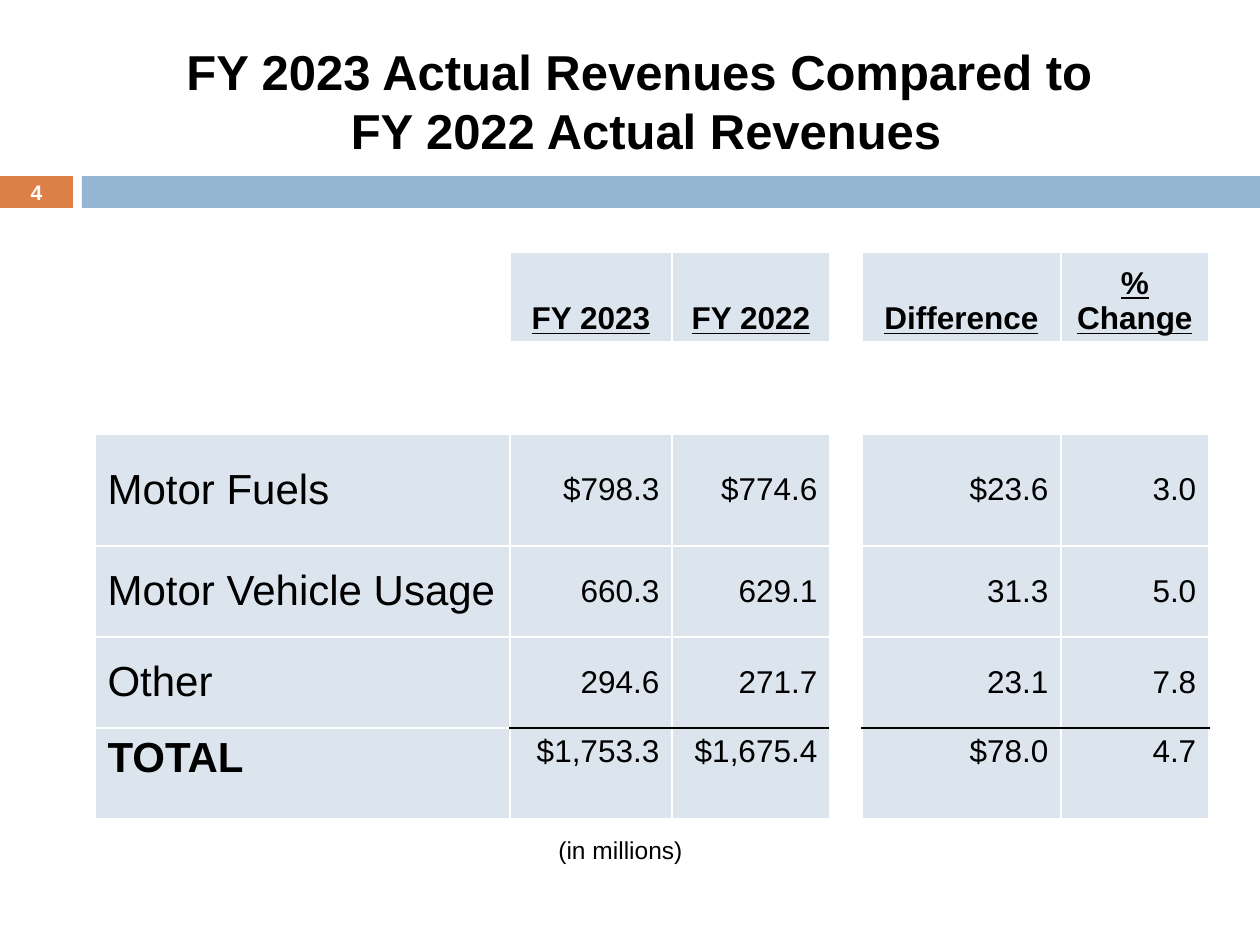
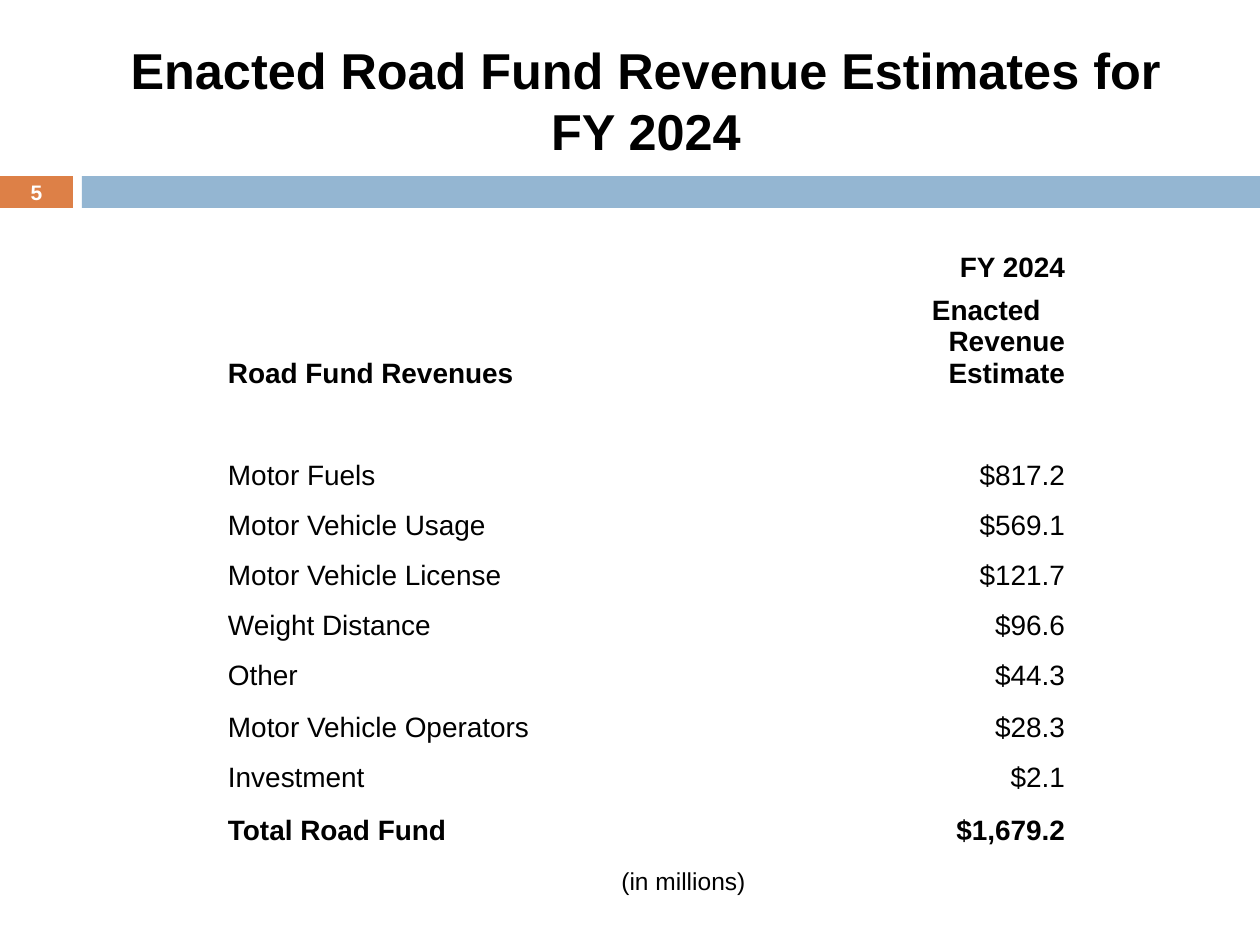
"""Build two road fund revenue slides, each with a title band and a table."""
from dataclasses import dataclass
from typing import Optional

from lxml import etree
from pptx import Presentation
from pptx.dml.color import RGBColor as RGB
from pptx.enum.shapes import MSO_SHAPE as SHAPE
from pptx.enum.text import MSO_ANCHOR as ANCHOR, MSO_AUTO_SIZE as FIT, PP_ALIGN as ALIGN
from pptx.oxml.ns import qn
from pptx.util import Emu, Pt

PX = 914400 / 126
FONT = "Arial"
COLORS = {"orange": "DD8047", "blue": "94B6D2", "cell": "DCE5EE",
          "white": "FFFFFF", "black": "000000"}
SIDES = {"l": "lnL", "r": "lnR", "t": "lnT", "b": "lnB"}


@dataclass(frozen=True)
class Box:
    x: int
    y: int
    w: int
    h: int

    def emu(self) -> list[Emu]:
        return [px(v) for v in (self.x, self.y, self.w, self.h)]


@dataclass(frozen=True)
class TextStyle:
    size: float
    bold: bool = False
    underline: bool = False
    align: ALIGN = ALIGN.LEFT
    anchor: ANCHOR = ANCHOR.TOP
    color: str = "black"


@dataclass(frozen=True)
class Grid:
    box: Box
    cols: list[int]
    rows: list[int]


@dataclass(frozen=True)
class Page:
    number: int
    title: str
    title_size: float
    note: Box
    note_wraps: bool


TITLE = Box(84, 32, 1124, 136)
TAB = Box(0, 176, 73, 32)
BAND = Box(82, 176, 1178, 32)
NUMBER = Box(0, 175, 73, 34)

COMPARISON = Grid(Box(95, 252, 1114, 567), [415, 162, 158, 32, 199, 148],
                  [91, 91, 112, 91, 91, 91])
COMPARISON_ROWS = [
    ["", "FY 2023", "FY 2022", "", "Difference", "% Change"],
    [""] * 6,
    ["Motor Fuels", "$798.3", "$774.6", "", "$23.6", "3.0"],
    ["Motor Vehicle Usage", "660.3", "629.1", "", "31.3", "5.0"],
    ["Other", "294.6", "271.7", "", "23.1", "7.8"],
    ["TOTAL", "$1,753.3", "$1,675.4", "", "$78.0", "4.7"],
]
ESTIMATES = Grid(Box(227, 230, 839, 617), [499, 188, 152],
                 [53, 106, 53, 50, 50, 50, 50, 50, 52, 50, 53])
ESTIMATE_ROWS = [
    ("", "FY 2024"),
    ("Road Fund Revenues", "Enacted\nRevenue Estimate"),
    ("", ""),
    ("Motor Fuels", "$817.2"),
    ("Motor Vehicle Usage", "$569.1"),
    ("Motor Vehicle License", "$121.7"),
    ("Weight Distance", "$96.6"),
    ("Other", "$44.3"),
    ("Motor Vehicle Operators", "$28.3"),
    ("Investment", "$2.1"),
    ("Total Road Fund", "$1,679.2"),
]


def px(n: float) -> Emu:
    return Emu(round(n * PX))


def rgb(name: str) -> RGB:
    return RGB.from_string(COLORS[name])


def write(tf, text: str, style: TextStyle) -> None:
    tf.text = text
    for p in tf.paragraphs:
        p.alignment = style.align
        f = p.font
        f.name, f.size, f.bold, f.underline = FONT, Pt(style.size), style.bold, style.underline
        f.color.rgb = rgb(style.color)


def add_bar(slide, box: Box, color: str) -> None:
    sp = slide.shapes.add_shape(SHAPE.RECTANGLE, *box.emu())
    sp.shadow.inherit = False
    sp.fill.solid()
    sp.fill.fore_color.rgb = rgb(color)
    sp.line.fill.background()


def add_text(slide, box: Box, text: str, style: TextStyle, wrap: bool = True) -> None:
    tf = slide.shapes.add_textbox(*box.emu()).text_frame
    tf.word_wrap = wrap
    tf.vertical_anchor = style.anchor
    write(tf, text, style)


def add_page(prs, page: Page):
    slide = prs.slides.add_slide(prs.slide_layouts[5])
    add_bar(slide, TAB, "orange")
    add_bar(slide, BAND, "blue")
    title = slide.shapes.title
    title.left, title.top, title.width, title.height = TITLE.emu()
    tf = title.text_frame
    tf.auto_size, tf.vertical_anchor = FIT.NONE, ANCHOR.MIDDLE
    write(tf, page.title, TextStyle(page.title_size, True, align=ALIGN.CENTER))
    add_text(slide, NUMBER, str(page.number),
             TextStyle(12, True, align=ALIGN.CENTER, anchor=ANCHOR.MIDDLE, color="white"))
    add_text(slide, page.note, "(in millions)", TextStyle(14), page.note_wraps)
    return slide


def add_grid(slide, grid: Grid):
    table = slide.shapes.add_table(len(grid.rows), len(grid.cols), *grid.box.emu()).table
    table.first_row = table.horz_banding = False
    for col, w in zip(table.columns, grid.cols):
        col.width = px(w)
    for row, h in zip(table.rows, grid.rows):
        row.height = px(h)
    return table


def fill_cell(cell, text: str, style: TextStyle, fill: Optional[str] = None) -> None:
    cell.vertical_anchor = style.anchor
    write(cell.text_frame, text, style)
    if fill:
        cell.fill.solid()
        cell.fill.fore_color.rgb = rgb(fill)
    else:
        cell.fill.background()


def set_borders(cell, **special: tuple[str, int]) -> None:
    tc_pr = cell._tc.get_or_add_tcPr()
    for i, (side, tag) in enumerate(SIDES.items()):
        color, width = special.get(side, ("white", 1))
        ln = etree.Element(qn(f"a:{tag}"), w=str(Pt(width)))
        solid = etree.SubElement(ln, qn("a:solidFill"))
        etree.SubElement(solid, qn("a:srgbClr"), val=COLORS[color])
        tc_pr.insert(i, ln)


def comparison_style(row: int, col: int) -> TextStyle:
    if row == 0:
        return TextStyle(18, True, True, ALIGN.CENTER, ANCHOR.BOTTOM)
    total = row == len(COMPARISON_ROWS) - 1
    anchor = ANCHOR.TOP if total else ANCHOR.MIDDLE
    if col == 0 and row > 1:
        return TextStyle(24, total, anchor=anchor)
    return TextStyle(18, align=ALIGN.RIGHT, anchor=anchor)


def comparison_borders(row: int, text: str, col: int) -> dict[str, tuple[str, int]]:
    last = len(COMPARISON_ROWS) - 1
    if row == 0:
        return {"b": ("white", 3)}
    if row == 1:
        return {"t": ("white", 3)}
    if text and col and row >= last - 1:
        return {"t" if row == last else "b": ("black", 1)}
    return {}


def add_comparison(slide) -> None:
    table = add_grid(slide, COMPARISON)
    for r, texts in enumerate(COMPARISON_ROWS):
        for c, text in enumerate(texts):
            cell = table.cell(r, c)
            fill_cell(cell, text, comparison_style(r, c), "cell" if text else None)
            set_borders(cell, **comparison_borders(r, text, c))


def add_estimates(slide) -> None:
    table = add_grid(slide, ESTIMATES)
    for r, (label, value) in enumerate(ESTIMATE_ROWS):
        bold = r < 3 or r == len(ESTIMATE_ROWS) - 1
        for c, text in enumerate((label, "", value)):
            cell = table.cell(r, c)
            align = ALIGN.RIGHT if c == 2 else ALIGN.LEFT
            fill_cell(cell, text, TextStyle(16, bold, align=align, anchor=ANCHOR.BOTTOM))
            cell.margin_left = cell.margin_right = cell.margin_top = px(1)
            cell.margin_bottom = 0
            set_borders(cell)
    p = table.cell(1, 2).text_frame.paragraphs[0]
    p.alignment = ALIGN.LEFT
    p_pr = p._p.get_or_add_pPr()
    p_pr.set("marL", str(px(17)))
    p_pr.set("indent", "0")


def main() -> None:
    prs = Presentation()
    prs.slide_width, prs.slide_height = px(1260), px(945)
    add_comparison(add_page(prs, Page(
        4, "FY 2023 Actual Revenues Compared to \vFY 2022 Actual Revenues", 28,
        Box(546, 829, 221, 43), True)))
    add_estimates(add_page(prs, Page(
        5, "Enacted Road Fund Revenue Estimates for FY 2024", 28.8,
        Box(609, 860, 150, 43), False)))
    prs.save("out.pptx")


if __name__ == "__main__":
    main()
